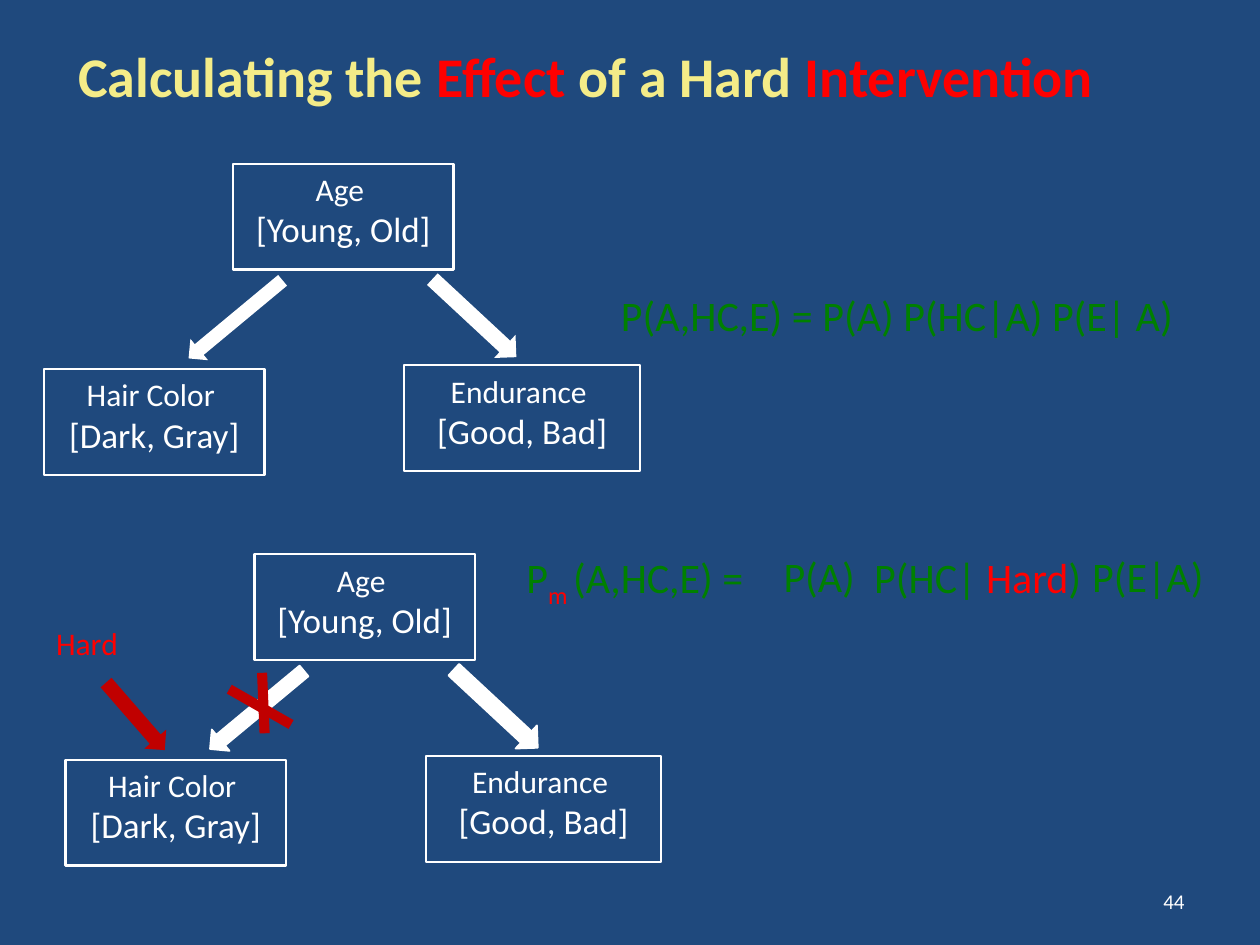
from lxml import etree
from pptx import Presentation
from pptx import util as u
from pptx.dml.color import RGBColor
from pptx.enum import shapes, text
from pptx.oxml import ns

WHITE, GREEN, RED, DARK_RED = "FFFFFF", "008000", "FF0000", "C00000"
YELLOW, BLUE = "F4EC88", "1F497D"


def color(value):
    return RGBColor.from_string(value)


class SlideBuilder:
    font = "Calibri"

    def __init__(self, slide):
        self.slide = slide
        fill = slide.background.fill
        fill.solid()
        fill.fore_color.rgb = color(BLUE)

    def box(self, at):
        return [u.Inches(value) for value in at]

    def style(self, run, size, value, bold=False):
        run.font.name = self.font
        run.font.size = u.Pt(size)
        run.font.bold = bold
        run.font.color.rgb = color(value)

    def add_runs(self, paragraph, parts, size, bold=False):
        for words, value in parts:
            run = paragraph.add_run()
            run.text = words
            self.style(run, size, value, bold)

    def title(self, at, parts):
        shape = self.slide.shapes.title
        shape.left, shape.top, shape.width, shape.height = self.box(at)
        frame = shape.text_frame
        frame.auto_size = text.MSO_AUTO_SIZE.NONE
        frame.vertical_anchor = text.MSO_ANCHOR.BOTTOM
        paragraph = frame.paragraphs[0]
        paragraph.alignment = text.PP_ALIGN.LEFT
        self.add_runs(paragraph, parts, 32, True)

    def label(self, at, parts, size=24, align=text.PP_ALIGN.LEFT,
              anchor=text.MSO_ANCHOR.TOP, tab=None):
        frame = self.slide.shapes.add_textbox(*self.box(at)).text_frame
        frame.word_wrap = True
        frame.vertical_anchor = anchor
        paragraph = frame.paragraphs[0]
        paragraph.alignment = align
        if tab:
            properties = paragraph._p.get_or_add_pPr()
            tabs = etree.SubElement(properties, ns.qn("a:tabLst"))
            etree.SubElement(tabs, ns.qn("a:tab"), pos=str(u.Inches(tab)), algn="l")
        self.add_runs(paragraph, parts, size)
        return paragraph

    def node(self, at, name, states):
        shape = self.slide.shapes.add_shape(
            shapes.MSO_SHAPE.RECTANGLE, *self.box(at))
        shape.shadow.inherit = False
        shape.fill.background()
        shape.line.color.rgb = color(WHITE)
        shape.line.width = u.Pt(1.25)
        frame = shape.text_frame
        frame.vertical_anchor = text.MSO_ANCHOR.TOP
        frame.text = f"{name} \n{states}"
        for paragraph, size in zip(frame.paragraphs, (18, 20)):
            paragraph.alignment = text.PP_ALIGN.CENTER
            self.style(paragraph.runs[0], size, WHITE)

    def arrow(self, at, rotation, value, outlined=False):
        shape = self.slide.shapes.add_shape(
            shapes.MSO_SHAPE.DOWN_ARROW, *self.box(at))
        shape.rotation = rotation
        shape.shadow.inherit = False
        shape.fill.solid()
        shape.fill.fore_color.rgb = color(value)
        if outlined:
            shape.line.color.rgb = color(value)
            shape.line.width = u.Pt(1)
        else:
            shape.line.fill.background()

    def stroke(self, ends):
        line = self.slide.shapes.add_connector(
            shapes.MSO_CONNECTOR.STRAIGHT, *self.box(ends))
        line.line.color.rgb = color(DARK_RED)
        line.line.width = u.Pt(5.75)
        etree.SubElement(line._element.spPr, ns.qn("a:effectLst"))

    def network(self, left, top, outlined):
        nodes = [
            (1.5, 0, 1.75, "Age", "[Young, Old]"),
            (0, 1.63, 1.75, "Hair Color", "[Dark, Gray]"),
            (2.86, 1.6, 1.87, "Endurance", "[Good, Bad]"),
        ]
        for x, y, width, name, states in nodes:
            self.node((left + x, top + y, width, 0.84), name, states)
        self.arrow((left + 1.41, top + 0.75, 0.22, 0.97), 50.3, WHITE, outlined)
        self.arrow((left + 3.29, top + 0.77, 0.25, 0.91), 312.9, WHITE, outlined)


def main():
    presentation = Presentation()
    presentation.slide_width = u.Inches(10)
    presentation.slide_height = u.Inches(7.5)
    slide = presentation.slides.add_slide(presentation.slide_layouts[5])
    builder = SlideBuilder(slide)

    builder.title((0.52, 0.1, 9.23, 0.81), [
        ("Calculating the ", YELLOW), ("Effect ", RED),
        ("of a Hard ", YELLOW), ("Intervention", RED)])

    builder.label((4.83, 2.25, 5.17, 0.5),
                  [("P(A,HC,E) = P(A) P(HC|A) P(E| A)", GREEN)])
    builder.label((6.84, 4.33, 2.26, 0.5),
                  [("P(HC| ", GREEN), ("Hard", RED), (")", GREEN)])
    manipulated = builder.label((4.08, 4.33, 2.22, 0.5), [
        ("P", GREEN), ("m ", RED), ("(A,HC,E) =", GREEN)])
    manipulated.runs[1].font._element.set("baseline", "-25000")
    builder.label((6.12, 4.32, 3.88, 0.51), [("P(A)\tP(E|A)", GREEN)], tab=2.45)

    builder.network(0.35, 1.3, False)
    builder.network(0.52, 4.4, True)

    builder.arrow((0.96, 5.33, 0.23, 0.71), 319, DARK_RED)
    builder.label((0.13, 4.9, 1.12, 0.5), [("Hard", RED)], 18,
                  text.PP_ALIGN.CENTER)
    builder.stroke((1.82, 5.47, 2.31, 5.75))
    builder.stroke((2.08, 5.34, 2.1, 5.82))

    builder.label((7.17, 6.95, 2.33, 0.4), [("44", WHITE)], 12,
                  text.PP_ALIGN.RIGHT, text.MSO_ANCHOR.MIDDLE)
    presentation.save("out.pptx")


if __name__ == "__main__":
    main()
